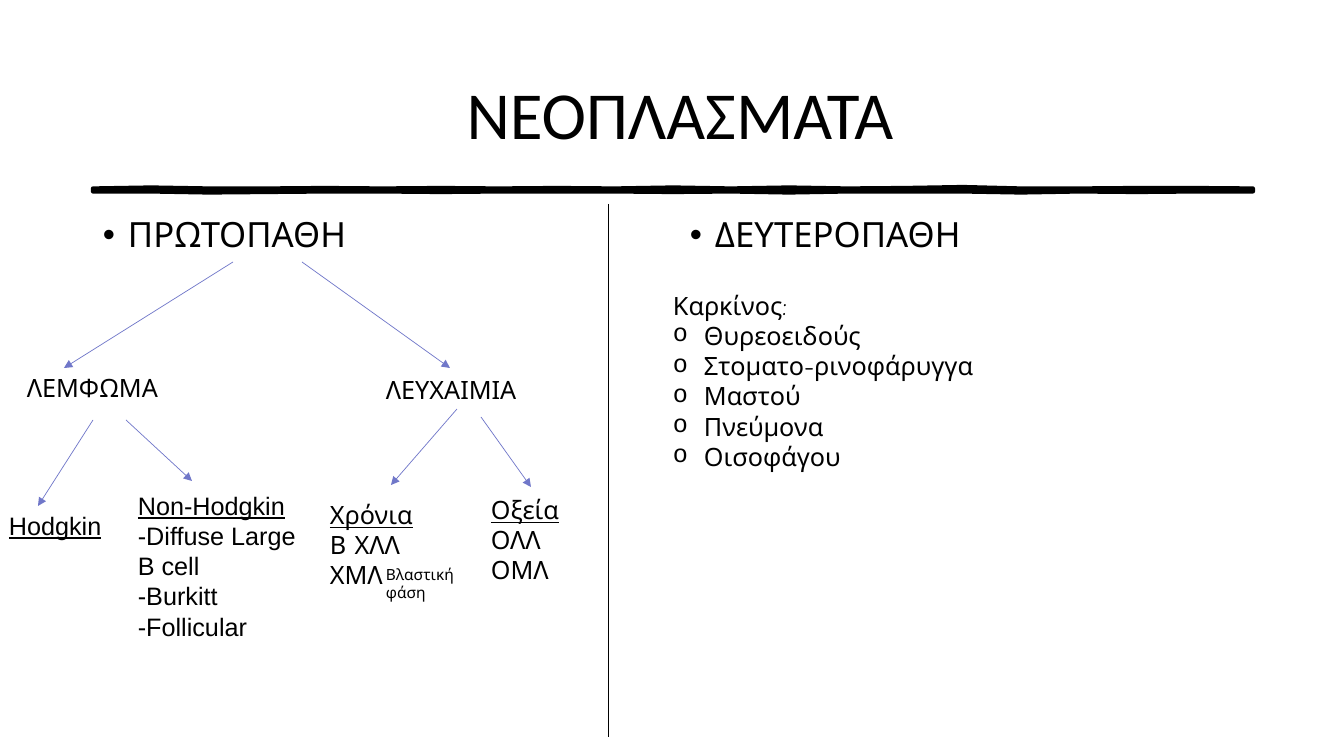
from dataclasses import dataclass

from lxml import etree
from pptx import Presentation
from pptx.dml.color import RGBColor
from pptx.enum.shapes import MSO_CONNECTOR
from pptx.enum.text import MSO_ANCHOR, MSO_AUTO_SIZE, PP_ALIGN
from pptx.oxml.ns import qn
from pptx.util import Emu, Pt

STRAIGHT = MSO_CONNECTOR.STRAIGHT
MIDDLE, TOP = MSO_ANCHOR.MIDDLE, MSO_ANCHOR.TOP
LEFT, CENTER = PP_ALIGN.LEFT, PP_ALIGN.CENTER
GROW, FIXED = MSO_AUTO_SIZE.SHAPE_TO_FIT_TEXT, MSO_AUTO_SIZE.NONE
SCALE = 914400 / 100.8


def px(n):
    return Emu(round(n * SCALE))


@dataclass(frozen=True)
class Theme:
    ink: RGBColor = RGBColor(0, 0, 0)
    arrow: RGBColor = RGBColor(0x70, 0x77, 0xC9)
    title: float = 48
    head: float = 24.8
    text: float = 18
    note: float = 11
    thin: float = 0.5
    brush: float = 3
    plain: str = "Calibri"
    comic: str = "Comic Neue"
    latin: str = "Arial"


class Deck:
    def __init__(self, theme):
        self.theme = theme
        self.prs = Presentation()
        self.prs.slide_width, self.prs.slide_height = px(1344), px(756)
        self.slide = self.prs.slides.add_slide(self.prs.slide_layouts[6])
        self.shapes = self.slide.shapes

    def frame(self, box, anchor=TOP, fit=GROW):
        frame = self.shapes.add_textbox(*map(px, box)).text_frame
        frame.word_wrap = True
        frame.auto_size = fit
        frame.vertical_anchor = anchor
        return frame

    def fill(self, frame, lines, size, face, align=LEFT, under=False, mark=None, start=0):
        """Fill a frame; lines from index start on carry the bullet mark."""
        for i, line in enumerate(lines):
            para = frame.paragraphs[0] if i == 0 else frame.add_paragraph()
            para.text = line
            para.alignment = align
            if mark and i >= start:
                self.bullet(para, *mark)
            font = para.font
            font.size, font.name = Pt(size), face
            font.color.rgb = self.theme.ink
            font.underline = under and i == 0

    def bullet(self, para, char, face, indent):
        props = para._p.get_or_add_pPr()
        props.set("marL", str(px(indent)))
        props.set("indent", str(-px(indent)))
        etree.SubElement(props, qn("a:buFont"), typeface=face)
        etree.SubElement(props, qn("a:buChar"), char=char)

    def title(self, box, text):
        frame = self.frame(box, MIDDLE, FIXED)
        self.fill(frame, [text], self.theme.title, self.theme.plain, CENTER)

    def head(self, box, text):
        frame = self.frame(box, fit=FIXED)
        self.fill(frame, [text], self.theme.head, self.theme.comic,
                  mark=("•", self.theme.latin, 25))
        frame.paragraphs[0].line_spacing = 0.9

    def label(self, box, *lines, face=None, size=None, under=False):
        self.fill(self.frame(box), lines, size or self.theme.text,
                  face or self.theme.comic, under=under)

    def items(self, box, *lines):
        self.fill(self.frame(box), lines, self.theme.text, self.theme.comic,
                  mark=("o", "Courier New", 31), start=1)

    def line(self, ends, color, arrow=False):
        line = self.shapes.add_connector(STRAIGHT, *map(px, ends))
        line.line.color.rgb = color
        line.line.width = Pt(self.theme.thin)
        props = line._element.spPr
        if arrow:
            etree.SubElement(props.find(qn("a:ln")), qn("a:tailEnd"), type="triangle")
        etree.SubElement(props, qn("a:effectLst"))

    def stroke(self, left, step, upper, lower):
        """Draw a brush stroke from edge heights given in tenths of a px."""
        top = [((left + i * step) * 10, y) for i, y in enumerate(upper)]
        base = [((left + i * step) * 10, y) for i, y in enumerate(lower)]
        pen = self.shapes.build_freeform(*top[0], scale=SCALE / 10)
        pen.add_line_segments(top[1:] + base[::-1], close=True)
        shape = pen.convert_to_shape()
        shape.shadow.inherit = False
        shape.fill.solid()
        shape.fill.fore_color.rgb = self.theme.ink
        shape.line.color.rgb = self.theme.ink
        shape.line.width = Pt(self.theme.brush)


def main():
    theme = Theme()
    deck = Deck(theme)

    # Title and brush rule
    deck.stroke(
        93, 58,
        [1885, 1875, 1885, 1885, 1880, 1885, 1880, 1885, 1880, 1885, 1875,
         1885, 1875, 1885, 1880, 1870, 1885, 1885, 1880, 1880, 1885],
        [1915, 1915, 1925, 1920, 1915, 1915, 1920, 1915, 1915, 1915, 1920,
         1915, 1925, 1915, 1915, 1915, 1925, 1915, 1920, 1915, 1915])
    deck.title((93, 40, 1159, 146), " ΝΕΟΠΛΑΣΜΑΤΑ")

    # Two columns
    deck.head((93, 213, 572, 56), "ΠΡΩΤΟΠΑΘΗ")
    deck.head((680, 213, 572, 49), "ΔΕΥΤΕΡΟΠΑΘΗ")
    deck.line((608, 204, 608, 737), theme.ink)

    # Tree arrows
    for ends in ((233, 262, 64, 368), (302, 262, 450, 368),
                 (93, 420, 38, 506), (126, 420, 192, 481),
                 (457, 409, 391, 485), (481, 417, 531, 487)):
        deck.line(ends, theme.arrow, arrow=True)

    # Tree labels
    deck.label((17, 367, 243, 40), "ΛΕΜΦΩΜΑ")
    deck.label((376, 369, 265, 40), "ΛΕΥΧΑΙΜΙΑ")
    deck.label((-1, 505, 236, 40), "Hodgkin", face=theme.latin, under=True)
    deck.label((128, 485, 195, 163), "Non-Hodgkin", "-Diffuse Large B cell",
               "-Burkitt", "-Follicular", face=theme.latin, under=True)
    deck.label((320, 494, 147, 102), "Χρόνια", "Β ΧΛΛ", "ΧΜΛ", under=True)
    deck.label((481, 489, 133, 102), "Οξεία", "ΟΛΛ", "ΟΜΛ", under=True)
    deck.label((376, 560, 97, 47), "Βλαστική φάση", size=theme.note)

    # Secondary tumours
    deck.items((663, 285, 413, 224), "Καρκίνος:", "Θυρεοειδούς",
               "Στοματο-ρινοφάρυγγα", "Μαστού", "Πνεύμονα", "Οισοφάγου")

    deck.prs.save("out.pptx")


if __name__ == "__main__":
    main()
